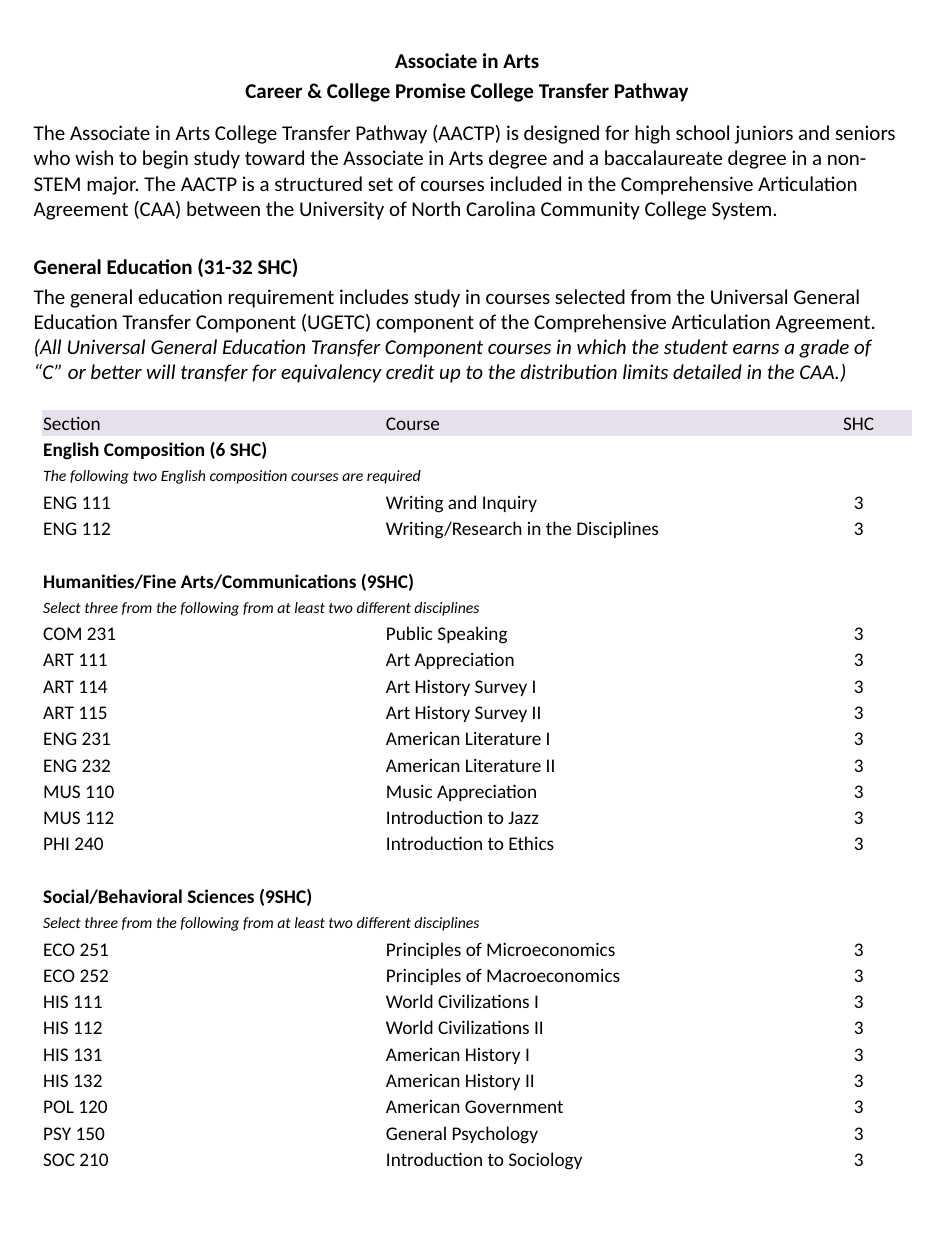
import pptx
import pptx.util
import pptx.dml.color
import pptx.enum.text
import lxml.etree

Cm, Pt = pptx.util.Cm, pptx.util.Pt
RGB = pptx.dml.color.RGBColor
ALIGN = pptx.enum.text.PP_ALIGN
ANCHOR = pptx.enum.text.MSO_ANCHOR

theme = {
    "font": "Calibri", "ink": RGB(0, 0, 0), "band": RGB(0xE6, 0xE0, 0xEC),
    "prose": Pt(12), "row": Pt(11), "note": Pt(9),
    "table_style": "{2D5ABB26-0587-4C30-8999-92F81FD0307C}",
}


def set_all(target, values):
    for key, value in values.items():
        setattr(target, key, value)


def write(paragraph, text, size, bold=False, italic=False):
    run = paragraph.add_run()
    run.text = text
    set_all(run.font, {"name": theme["font"], "size": size, "bold": bold, "italic": italic})
    run.font.color.rgb = theme["ink"]


deck = pptx.Presentation()
set_all(deck, {"slide_width": Cm(19.05), "slide_height": Cm(25.4)})
page = deck.slides.add_slide(deck.slide_layouts[5])

heading = page.shapes.title
set_all(heading, {"left": Cm(0.43), "top": Cm(0.84), "width": Cm(17.98), "height": Cm(1.4)})
set_all(heading.text_frame, {
    "word_wrap": True, "vertical_anchor": ANCHOR.TOP,
    "auto_size": pptx.enum.text.MSO_AUTO_SIZE.NONE,
})
heading_lines = ["Associate in Arts", "Career & College Promise College Transfer Pathway"]
for index, line in enumerate(heading_lines):
    paragraph = heading.text_frame.add_paragraph() if index else heading.text_frame.paragraphs[0]
    set_all(paragraph, {"alignment": ALIGN.CENTER, "space_before": Pt(2.4 * index)})
    write(paragraph, line, theme["prose"], bold=True)

overview = page.shapes.add_textbox(Cm(0.43), Cm(2.29), Cm(17.98), Cm(5.7))
overview.text_frame.word_wrap = True
overview_paragraphs = [
    (0, [("The Associate in Arts College Transfer Pathway (AACTP) is designed for high school juniors "
          "and seniors who wish to begin study toward the Associate in Arts degree and a baccalaureate "
          "degree in a non-STEM major. The AACTP is a structured set of courses included in the "
          "Comprehensive Articulation Agreement (CAA) between the University of North Carolina "
          "Community College System.", {})]),
    (19, [("General Education (31-32 SHC)", {"bold": True})]),
    (2.4, [("The general education requirement includes study in courses selected from the Universal "
            "General Education Transfer Component (UGETC) component of the Comprehensive Articulation "
            "Agreement. ", {}),
           ("(All Universal General Education Transfer Component courses in which the student earns a "
            "grade of “C” or better will transfer for equivalency credit up to the distribution limits "
            "detailed in the CAA.)", {"italic": True})]),
]
for index, (gap, pieces) in enumerate(overview_paragraphs):
    paragraph = overview.text_frame.add_paragraph() if index else overview.text_frame.paragraphs[0]
    set_all(paragraph, {"alignment": ALIGN.LEFT, "space_before": Pt(gap)})
    for text, style in pieces:
        write(paragraph, text, theme["prose"], **style)

select_three = "Select three from the following from at least two different disciplines"
sections = [
    ("English Composition (6 SHC)", 3, "The following two English composition courses are required", 3, [
        ("ENG 111", "Writing and Inquiry"),
        ("ENG 112", "Writing/Research in the Disciplines"),
    ]),
    ("Humanities/Fine Arts/Communications (9SHC)", 3, select_three, 2, [
        ("COM 231", "Public Speaking"),
        ("ART 111", "Art Appreciation"),
        ("ART 114", "Art History Survey I"),
        ("ART 115", "Art History Survey II"),
        ("ENG 231", "American Literature I"),
        ("ENG 232", "American Literature II"),
        ("MUS 110", "Music Appreciation"),
        ("MUS 112", "Introduction to Jazz"),
        ("PHI 240", "Introduction to Ethics"),
    ]),
    ("Social/Behavioral Sciences (9SHC)", 2, select_three, 2, [
        ("ECO 251", "Principles of Microeconomics"),
        ("ECO 252", "Principles of Macroeconomics"),
        ("HIS 111", "World Civilizations I"),
        ("HIS 112", "World Civilizations II"),
        ("HIS 131", "American History I"),
        ("HIS 132", "American History II"),
        ("POL 120", "American Government"),
        ("PSY 150", "General Psychology"),
        ("SOC 210", "Introduction to Sociology"),
    ]),
]

plain = {"size": theme["row"]}
course_rows = [(("Section", "Course", "SHC"), 1, plain)]
for index, (name, name_span, note, note_span, courses) in enumerate(sections):
    if index:
        course_rows.append((("", "", ""), 1, plain))
    course_rows.append(((name, "", ""), name_span, {"size": theme["row"], "bold": True}))
    course_rows.append(((note, "", ""), note_span, {"size": theme["note"], "italic": True}))
    course_rows += [((code, course, "3"), 1, plain) for code, course in courses]

column_widths = [Cm(6.91), Cm(8.48), Cm(2.16)]
row_height = Cm(0.53)
schedule = page.shapes.add_table(len(course_rows), 3, Cm(0.84), Cm(8.26),
                                 sum(column_widths), row_height * len(course_rows)).table
set_all(schedule, {"first_row": False, "horz_banding": False})
schedule._tbl.tblPr[0].text = theme["table_style"]
for column, width in zip(schedule.columns, column_widths):
    column.width = width

cell_format = {
    "vertical_anchor": ANCHOR.MIDDLE, "margin_left": Cm(0.03), "margin_right": Cm(0.03),
    "margin_top": Cm(0.03), "margin_bottom": 0,
}
for row_index, (texts, span, style) in enumerate(course_rows):
    schedule.rows[row_index].height = row_height
    for column_index, text in enumerate(texts):
        cell = schedule.cell(row_index, column_index)
        set_all(cell, cell_format)
        if row_index:
            cell.fill.background()
        else:
            cell.fill.solid()
            cell.fill.fore_color.rgb = theme["band"]
        paragraph = cell.text_frame.paragraphs[0]
        paragraph.alignment = ALIGN.CENTER if column_index == 2 else ALIGN.LEFT
        if text:
            write(paragraph, text, **style)
        else:
            end_mark = lxml.etree.SubElement(paragraph._p, pptx.oxml.ns.qn("a:endParaRPr"))
            end_mark.set("sz", str(int(theme["row"].pt * 100)))
    if span > 1:
        schedule.cell(row_index, 0).merge(schedule.cell(row_index, span - 1))

deck.save("out.pptx")
